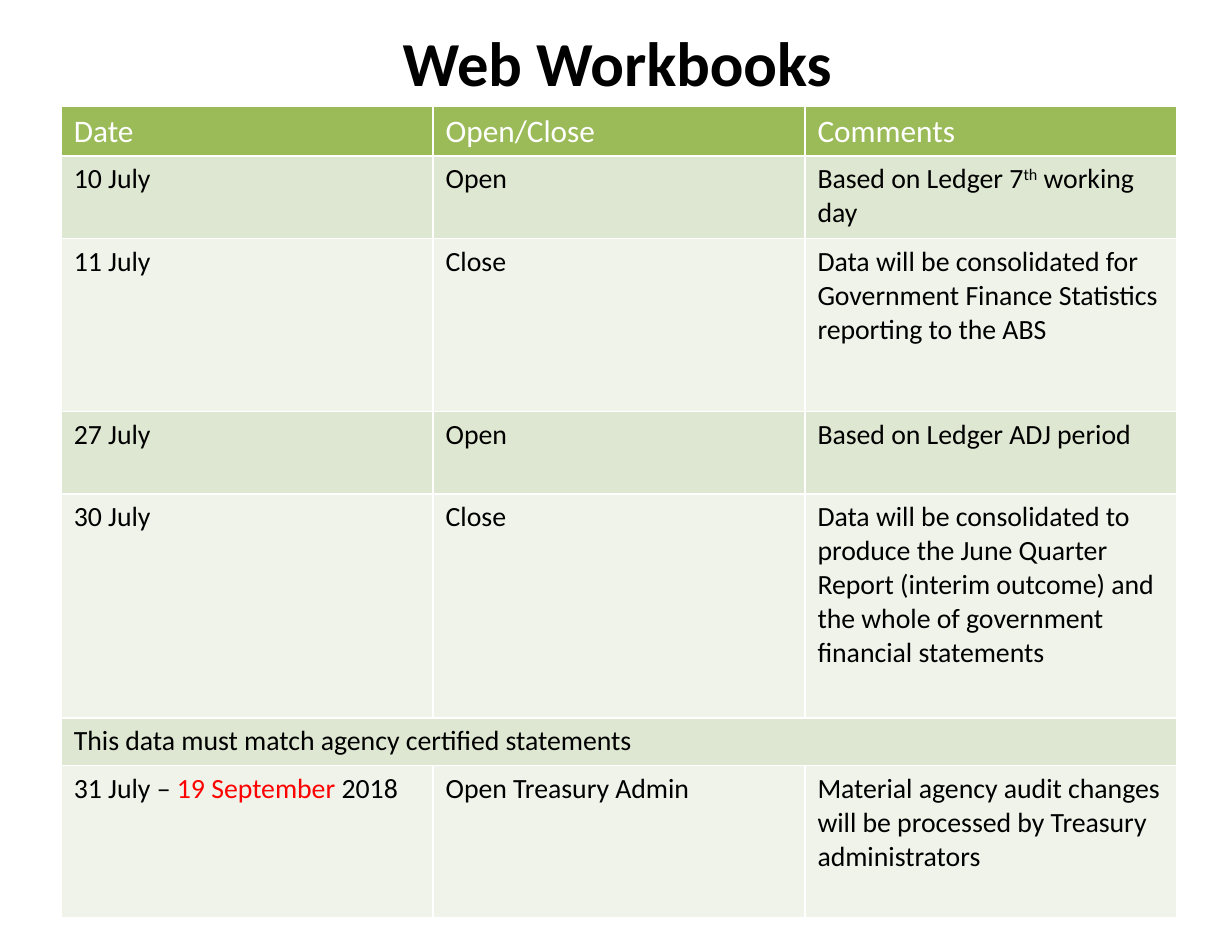
from typing import NamedTuple

from lxml import etree
from pptx import Presentation
from pptx.dml.color import RGBColor
from pptx.enum.text import MSO_ANCHOR, PP_ALIGN
from pptx.oxml.ns import qn
from pptx.util import Cm, Emu, Pt

MIDDLE = MSO_ANCHOR.MIDDLE
CENTER = PP_ALIGN.CENTER

SLIDE_WIDTH, SLIDE_HEIGHT = Cm(25), Cm(19)
FONT = "Calibri"
WHITE, BLACK, RED = "FFFFFF", "000000", "FF0000"
HEADER_GREEN = "9BBB59"
BAND_FILLS = ("DEE7D1", "EFF3EA")


class Piece(NamedTuple):
    text: str
    color: str | None = None
    superscript: bool = False


class Entry(NamedTuple):
    height: float  # percent of the slide height
    cells: tuple[tuple[Piece, ...], ...]


def entry(height: float, *cells: str | tuple[Piece, ...]) -> Entry:
    """Make a table row, turning plain strings into single pieces."""
    return Entry(height, tuple((Piece(c),) if isinstance(c, str) else c for c in cells))


SCHEDULE = (
    entry(5.08, "Date", "Open/Close", "Comments"),
    entry(8.82, "10 July", "Open",
          (Piece("Based on Ledger 7"), Piece("th", superscript=True), Piece(" working day"))),
    entry(18.45, "11 July", "Close",
          "Data will be consolidated for Government Finance Statistics reporting to the ABS"),
    entry(8.82, "27 July", "Open", "Based on Ledger ADJ period"),
    entry(23.93, "30 July", "Close",
          "Data will be consolidated to produce the June Quarter Report (interim outcome) "
          "and the whole of government financial statements"),
    entry(5.08, "This data must match agency certified statements"),
    entry(16.31,
          (Piece("31 July – "), Piece("19 September ", RED), Piece("2018")),
          "Open Treasury Admin",
          "Material agency audit changes will be processed by Treasury administrators"),
)
COLUMN_COUNT = 3
COLUMN_WIDTH = 30.18  # percent of the slide width


def rgb(color: str) -> RGBColor:
    return RGBColor.from_string(color)


def across(percent: float) -> Emu:
    return Emu(round(SLIDE_WIDTH * percent / 100))


def down(percent: float) -> Emu:
    return Emu(round(SLIDE_HEIGHT * percent / 100))


def write(paragraph, pieces: tuple[Piece, ...], size: int, color: str, bold: bool = False) -> None:
    font = paragraph.font
    font.name, font.size, font.bold = FONT, Pt(size), bold
    font.color.rgb = rgb(color)
    for piece in pieces:
        run = paragraph.add_run()
        run.text = piece.text
        if piece.color:
            run.font.color.rgb = rgb(piece.color)
        if piece.superscript:
            run._r.get_or_add_rPr().set("baseline", "30000")


def set_borders(cell) -> None:
    """Draw thin white lines on all four sides of the cell."""
    properties = cell._tc.get_or_add_tcPr()
    for side in "LRTB":
        line = etree.SubElement(properties, qn(f"a:ln{side}"), w=str(Pt(1)))
        fill = etree.SubElement(line, qn("a:solidFill"))
        etree.SubElement(fill, qn("a:srgbClr"), val=WHITE)


def add_title(slide) -> None:
    box = slide.shapes.add_textbox(across(5.08), down(-1.8), across(90.04), down(16.71))
    frame = box.text_frame
    frame.word_wrap = True
    frame.vertical_anchor = MIDDLE
    heading = frame.paragraphs[0]
    heading.alignment = CENTER
    write(heading, (Piece("Web Workbooks"),), 36, BLACK, bold=True)


def add_schedule(slide) -> None:
    table = slide.shapes.add_table(
        len(SCHEDULE), COLUMN_COUNT, across(4.98), down(11.33),
        across(COLUMN_WIDTH * COLUMN_COUNT), down(sum(row.height for row in SCHEDULE)),
    ).table
    table.first_row = table.horz_banding = False
    for column in table.columns:
        column.width = across(COLUMN_WIDTH)

    for index, row in enumerate(SCHEDULE):
        is_header = index == 0
        table.rows[index].height = down(row.height)
        background = HEADER_GREEN if is_header else BAND_FILLS[(index - 1) % 2]
        for column in range(COLUMN_COUNT):
            cell = table.cell(index, column)
            set_borders(cell)
            cell.fill.solid()
            cell.fill.fore_color.rgb = rgb(background)
        if len(row.cells) == 1:
            table.cell(index, 0).merge(table.cell(index, COLUMN_COUNT - 1))
        for column, pieces in enumerate(row.cells):
            write(table.cell(index, column).text_frame.paragraphs[0], pieces,
                  18 if is_header else 16, WHITE if is_header else BLACK)


def main() -> None:
    presentation = Presentation()
    presentation.slide_width, presentation.slide_height = SLIDE_WIDTH, SLIDE_HEIGHT
    slide = presentation.slides.add_slide(presentation.slide_layouts[6])
    add_title(slide)
    add_schedule(slide)
    presentation.save("out.pptx")


if __name__ == "__main__":
    main()
